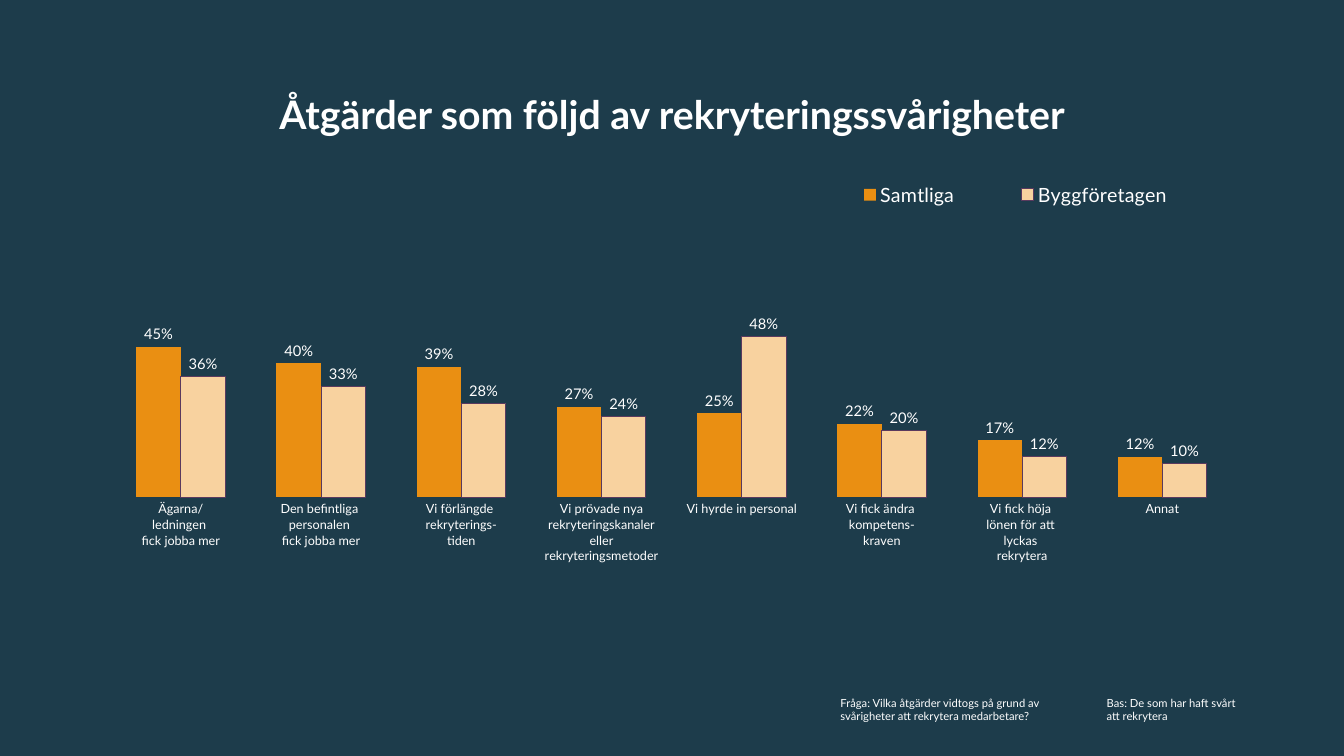
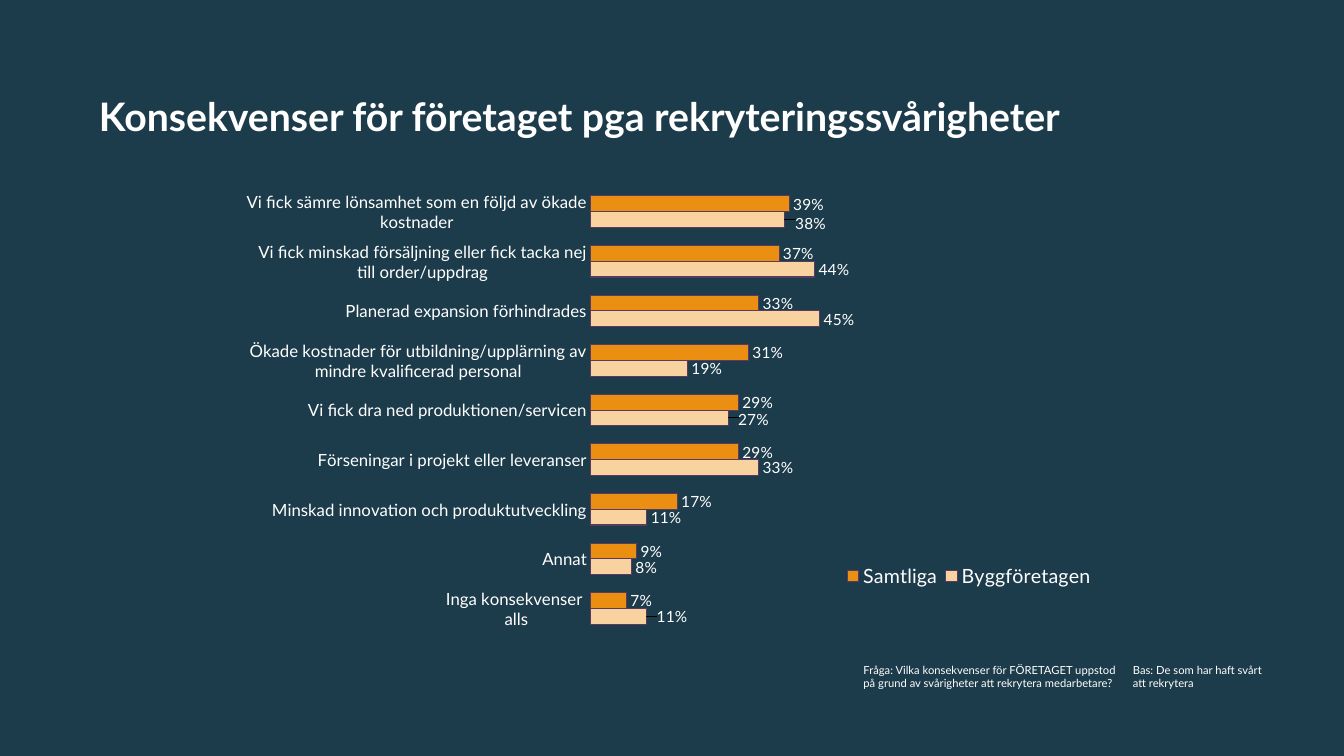
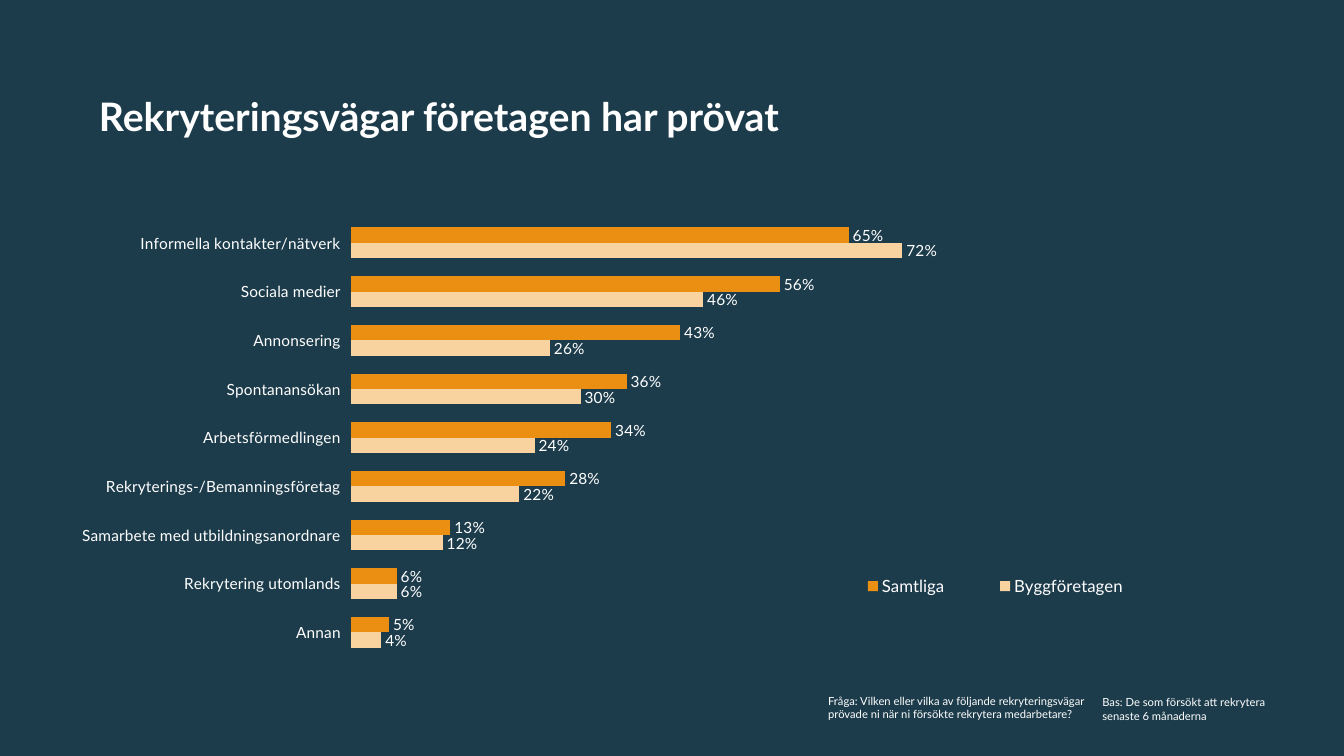
from copy import deepcopy
from dataclasses import dataclass, field

from pptx import Presentation
from pptx import util as u
from pptx.chart import data as chart_data
from pptx.dml import color
from pptx.enum import chart as kinds, text
from pptx.oxml import xmlchemy


@dataclass(frozen=True)
class Theme:
    """Colours, font and type sizes of the deck."""
    font: str = "Lato"
    background: str = "1D3C4B"
    ink: str = "FFFFFF"
    outline: str = "5A3A5E"
    title: float = 28
    note: float = 8


@dataclass(frozen=True)
class Frame:
    """A rectangle on the slide, in centimetres."""
    left: float
    top: float
    width: float
    height: float

    def lengths(self) -> tuple:
        """Return the four sides as slide lengths."""
        return tuple(u.Cm(side) for side in (self.left, self.top, self.width, self.height))


@dataclass(frozen=True)
class Series:
    """One respondent group and its percentages."""
    name: str
    fill: str
    values: tuple
    outlined: bool = False
    nudges: dict = field(default_factory=dict)


@dataclass(frozen=True)
class Note:
    """A small footnote."""
    frame: Frame
    words: str


@dataclass(frozen=True)
class SurveyChart:
    """A clustered chart with its plot and legend places and type sizes."""
    kind: kinds.XL_CHART_TYPE
    frame: Frame
    plot: Frame
    legend: Frame
    categories: tuple
    series: tuple
    category_size: float
    label_size: float
    legend_size: float
    tick: kinds.XL_TICK_MARK = kinds.XL_TICK_MARK.NONE


@dataclass(frozen=True)
class SurveyPage:
    """One question of the survey."""
    title: str
    title_frame: Frame
    chart: SurveyChart
    notes: tuple
    alignment: text.PP_ALIGN = text.PP_ALIGN.LEFT


THEME = Theme()
ALL, BUILDERS = ("Samtliga", "EA8F12"), ("Byggföretagen", "F8D29F")
COLUMNS = kinds.XL_CHART_TYPE.COLUMN_CLUSTERED
BARS = kinds.XL_CHART_TYPE.BAR_CLUSTERED

PAGES = (
    SurveyPage(
        "Åtgärder som följd av rekryteringssvårigheter",
        Frame(0, 1.8, 33.87, 2.31),
        SurveyChart(
            COLUMNS,
            Frame(2.79, 3.89, 28.27, 11.28),
            Frame(2.79, 4.1, 28.27, 8.43),
            Frame(20.24, 4.36, 10.71, 1.1),
            (
                "Ägarna/\nledningen \nfick jobba mer",
                "Den befintliga \npersonalen \nfick jobba mer",
                "Vi förlängde \nrekryterings-\ntiden",
                "Vi prövade nya rekryteringskanaler eller rekryteringsmetoder",
                "Vi hyrde in personal",
                "Vi fick ändra \nkompetens-\nkraven",
                "Vi fick höja \nlönen för att \nlyckas \nrekrytera",
                "Annat",
            ),
            (
                Series(*ALL, (45, 40, 39, 27, 25, 22, 17, 12)),
                Series(*BUILDERS, (36, 33, 28, 24, 48, 20, 12, 10), outlined=True),
            ),
            category_size=9, label_size=10.5, legend_size=14,
        ),
        (
            Note(Frame(27.64, 17.42, 3.86, 0.94), "Bas: De som har haft svårt att rekrytera"),
            Note(Frame(20.93, 17.42, 6.71, 0.94),
                 "Fråga: Vilka åtgärder vidtogs på grund av svårigheter att rekrytera medarbetare?"),
        ),
        text.PP_ALIGN.CENTER,
    ),
    SurveyPage(
        "Konsekvenser för företaget pga rekryteringssvårigheter",
        Frame(2.24, 2.01, 28.75, 1.96),
        SurveyChart(
            BARS,
            Frame(6.17, 4.57, 21.54, 11.4),
            Frame(14.89, 4.71, 12.82, 11.25),
            Frame(21.14, 14.04, 6.56, 0.95),
            (
                "Inga konsekvenser \nalls",
                "Annat",
                "Minskad innovation och produktutveckling",
                "Förseningar i projekt eller leveranser",
                "Vi fick dra ned produktionen/servicen",
                "Ökade kostnader för utbildning/upplärning av mindre kvalificerad personal",
                "Planerad expansion förhindrades",
                "Vi fick minskad försäljning eller fick tacka nej till order/uppdrag",
                "Vi fick sämre lönsamhet som en följd av ökade kostnader",
            ),
            (
                Series(*BUILDERS, (11, 8, 11, 33, 27, 19, 45, 44, 38), outlined=True,
                       nudges={0: (0.15, 0), 4: (0.15, 0.03), 8: (0.18, 0.1)}),
                Series(*ALL, (7, 9, 17, 29, 29, 31, 33, 37, 39), outlined=True),
            ),
            category_size=12, label_size=11, legend_size=14,
        ),
        (
            Note(Frame(21.51, 16.59, 6.99, 1.68),
                 "Fråga: Vilka konsekvenser för FÖRETAGET uppstod på grund av svårigheter "
                 "att rekrytera medarbetare?"),
            Note(Frame(28.3, 16.59, 3.86, 0.94), "Bas: De som har haft svårt att rekrytera"),
        ),
    ),
    SurveyPage(
        "Rekryteringsvägar företagen har prövat",
        Frame(2.24, 2.01, 23.95, 1.96),
        SurveyChart(
            BARS,
            Frame(0.99, 4.7, 28.65, 13.11),
            Frame(8.84, 5.51, 19.31, 11.04),
            Frame(20.61, 14.27, 8.95, 1),
            (
                "Annan",
                "Rekrytering utomlands",
                "Samarbete med utbildningsanordnare",
                "Rekryterings-/Bemanningsföretag",
                "Arbetsförmedlingen",
                "Spontanansökan",
                "Annonsering",
                "Sociala medier",
                "Informella kontakter/nätverk",
            ),
            (
                Series(*BUILDERS, (4, 6, 12, 22, 24, 30, 26, 46, 72)),
                Series(*ALL, (5, 6, 13, 28, 34, 36, 43, 56, 65)),
            ),
            category_size=11, label_size=11, legend_size=12,
            tick=kinds.XL_TICK_MARK.OUTSIDE,
        ),
        (
            Note(Frame(27.53, 17.4, 5.11, 0.94),
                 "Bas: De som försökt att rekrytera senaste 6 månaderna"),
            Note(Frame(20.62, 17.37, 7.11, 1.32),
                 "Fråga: Vilken eller vilka av följande rekryteringsvägar prövade ni "
                 "när ni försökte rekrytera medarbetare?"),
        ),
    ),
)


def rgb(code: str) -> color.RGBColor:
    """Turn a hex code into a colour."""
    return color.RGBColor.from_string(code)


def style_font(font, size: float, bold: bool = False) -> None:
    """Apply the theme font, ink and a size."""
    font.name, font.size, font.bold = THEME.font, u.Pt(size), bold
    font.color.rgb = rgb(THEME.ink)


def write(shape, words: str, size: float, bold: bool = False):
    """Put one styled run in a shape and return its paragraph."""
    shape.text_frame.word_wrap = True
    para = shape.text_frame.paragraphs[0]
    span = para.add_run()
    span.text = words
    style_font(span.font, size, bold)
    return para


def add_child(parent, tag: str, value: object = None):
    """Append a chart element with an optional value."""
    child = xmlchemy.OxmlElement(f"c:{tag}")
    if value is not None:
        child.set("val", str(value))
    parent.append(child)
    return child


def manual_layout(settings: dict):
    """Build a manual layout element."""
    layout = xmlchemy.OxmlElement("c:layout")
    manual = add_child(layout, "manualLayout")
    for tag, value in settings.items():
        add_child(manual, tag, value)
    return layout


def place(element, index: int, part: Frame, whole: Frame, target: dict) -> None:
    """Fix a part of the chart at its place on the slide."""
    for old in element.findall(manual_layout({}).tag):
        element.remove(old)
    element.insert(index, manual_layout({
        **target, "xMode": "edge", "yMode": "edge",
        "x": (part.left - whole.left) / whole.width,
        "y": (part.top - whole.top) / whole.height,
        "w": part.width / whole.width,
        "h": part.height / whole.height,
    }))


def nudge_labels(labels, nudges: dict, whole: Frame) -> None:
    """Move single data labels off their usual place."""
    shared = list(labels)
    for position, (index, (right, down)) in enumerate(nudges.items()):
        label = xmlchemy.OxmlElement("c:dLbl")
        add_child(label, "idx", index)
        label.append(manual_layout({"x": right / whole.width, "y": down / whole.height}))
        for setting in shared:
            label.append(deepcopy(setting))
        labels.insert(position, label)


def style_series(bars, series: Series, survey: SurveyChart) -> None:
    """Colour one series and label its bars."""
    bars.format.fill.solid()
    bars.format.fill.fore_color.rgb = rgb(series.fill)
    if series.outlined:
        bars.format.line.color.rgb = rgb(THEME.outline)
        bars.format.line.width = u.Pt(0.75)
    else:
        bars.format.line.fill.background()
    labels = bars.data_labels
    labels.show_value = True
    labels.number_format = "##0\\%"
    labels.number_format_is_linked = False
    labels.position = kinds.XL_LABEL_POSITION.OUTSIDE_END
    style_font(labels.font, survey.label_size)
    nudge_labels(labels._element, series.nudges, survey.frame)


def add_survey_chart(page, survey: SurveyChart) -> None:
    """Draw a clustered chart with hidden value axis and placed legend."""
    numbers = chart_data.CategoryChartData()
    numbers.categories = survey.categories
    for series in survey.series:
        numbers.add_series(series.name, series.values)
    chart = page.shapes.add_chart(survey.kind, *survey.frame.lengths(), numbers).chart
    chart.has_title = False
    style_font(chart.font, survey.legend_size)

    axis = chart.category_axis
    axis.major_tick_mark = survey.tick
    axis.minor_tick_mark = kinds.XL_TICK_MARK.NONE
    axis.format.line.fill.background()
    style_font(axis.tick_labels.font, survey.category_size)
    scale = chart.value_axis
    scale.minimum_scale, scale.maximum_scale, scale.major_unit = 0, 100, 20
    scale.has_major_gridlines = False
    scale.visible = False

    plot = chart.plots[0]
    plot.gap_width, plot.overlap, plot.vary_by_categories = 115, 0, False
    for bars, series in zip(plot.series, survey.series):
        style_series(bars, series, survey)

    chart.has_legend = True
    legend = chart.legend
    legend.position = kinds.XL_LEGEND_POSITION.RIGHT
    legend.include_in_layout = False
    style_font(legend.font, survey.legend_size)
    place(legend._element, 1, survey.legend, survey.frame, {})
    place(chart._chartSpace.chart.plotArea, 0, survey.plot, survey.frame,
          {"layoutTarget": "inner"})


def add_title(page, content: SurveyPage) -> None:
    """Move and fill the title placeholder."""
    title = page.shapes.title
    title.left, title.top, title.width, title.height = content.title_frame.lengths()
    title.text_frame.auto_size = text.MSO_AUTO_SIZE.NONE
    title.text_frame.vertical_anchor = text.MSO_ANCHOR.MIDDLE
    para = write(title, content.title, THEME.title, bold=True)
    para.alignment, para.line_spacing = content.alignment, 0.9


def add_page(deck, content: SurveyPage) -> None:
    """Add one survey slide."""
    page = deck.slides.add_slide(deck.slide_layouts.get_by_name("Title Only"))
    add_title(page, content)
    add_survey_chart(page, content.chart)
    for note in content.notes:
        box = page.shapes.add_textbox(*note.frame.lengths())
        write(box, note.words, THEME.note)


def main() -> None:
    """Build and save the deck."""
    deck = Presentation()
    deck.slide_width, deck.slide_height = u.Cm(33.87), u.Cm(19.05)
    backdrop = deck.slide_master.background.fill
    backdrop.solid()
    backdrop.fore_color.rgb = rgb(THEME.background)
    for content in PAGES:
        add_page(deck, content)
    deck.save("out.pptx")


if __name__ == "__main__":
    main()
